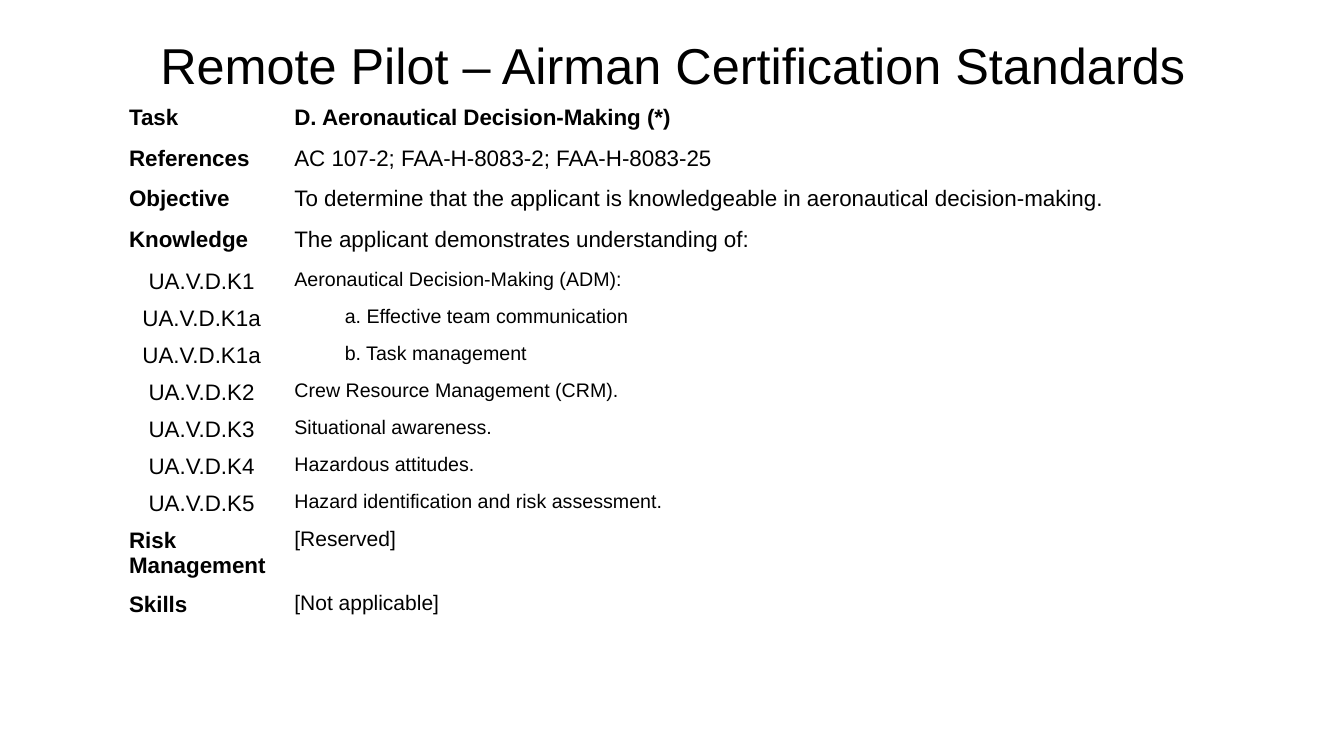
import pptx
import pptx.dml.color
import pptx.enum.text
import pptx.oxml.ns
import pptx.util
from lxml import etree
from pptx.util import Inches

BLACK = pptx.dml.color.RGBColor(0x00, 0x00, 0x00)
WHITE = pptx.dml.color.RGBColor(0xFF, 0xFF, 0xFF)
FONT = "Arial"
CENTER = pptx.enum.text.PP_ALIGN.CENTER
LEFT = pptx.enum.text.PP_ALIGN.LEFT

HEADING = "D. Aeronautical Decision-Making (*)"
OVERVIEW = [
    ("References", "AC 107-2; FAA-H-8083-2; FAA-H-8083-25"),
    ("Objective", "To determine that the applicant is knowledgeable in aeronautical decision-making."),
    ("Knowledge", "The applicant demonstrates understanding of:"),
]
KNOWLEDGE = [
    ("K1", "Aeronautical Decision-Making (ADM):", 0),
    ("K1a", "a. Effective team communication", 1),
    ("K1a", "b. Task management", 1),
    ("K2", "Crew Resource Management (CRM).", 0),
    ("K3", "Situational awareness.", 0),
    ("K4", "Hazardous attitudes.", 0),
    ("K5", "Hazard identification and risk assessment.", 0),
]
CLOSING = [("Risk Management", "[Reserved]"), ("Skills", "[Not applicable]")]
LABEL_WIDTH = 1.64
ROW_HEIGHTS = [0.41, 0.4, 0.41, 0.41] + [2.56 / len(KNOWLEDGE)] * len(KNOWLEDGE) + [0.63, 0.36]


def style_text(paragraph, size, bold=False, align=LEFT):
    paragraph.alignment = align
    for run in paragraph.runs:
        run.font.name = FONT
        run.font.size = pptx.util.Pt(size)
        run.font.bold = bold
        run.font.color.rgb = BLACK


def add_border(cell, side, width):
    qn = pptx.oxml.ns.qn
    line = etree.SubElement(cell._tc.get_or_add_tcPr(), qn(f"a:ln{side}"), w=str(pptx.util.Pt(width)))
    fill = etree.SubElement(line, qn("a:solidFill"))
    etree.SubElement(fill, qn("a:srgbClr"), val=str(WHITE))


def fill_cell(cell, text, size, bold=False, align=LEFT, level=0, bottom=1):
    cell.text_frame.text = text
    paragraph = cell.text_frame.paragraphs[0]
    style_text(paragraph, size, bold, align)
    if level:
        paragraph.level = level
        properties = paragraph._p.get_or_add_pPr()
        properties.set("marL", str(Inches(0.5 * level)))
        properties.set("indent", "0")
    for side, width in (("L", 1), ("R", 1), ("T", 1), ("B", bottom)):
        add_border(cell, side, width)
    cell.fill.background()


def add_title(slide, left, top, width, height):
    title = slide.shapes.title
    title.left, title.top = Inches(left), Inches(top)
    title.width, title.height = Inches(width), Inches(height)
    frame = title.text_frame
    frame.text = "Remote Pilot – Airman Certification Standards"
    frame.word_wrap = False
    frame.auto_size = pptx.enum.text.MSO_AUTO_SIZE.SHAPE_TO_FIT_TEXT
    style_text(frame.paragraphs[0], 36, align=CENTER)


def add_standards(slide, left, top, width, height):
    table = slide.shapes.add_table(
        len(ROW_HEIGHTS), 2, Inches(left), Inches(top), Inches(width), Inches(height)
    ).table
    table.horz_banding = False
    for column, column_width in zip(table.columns, (LABEL_WIDTH, width - LABEL_WIDTH)):
        column.width = Inches(column_width)
    for row, row_height in zip(table.rows, ROW_HEIGHTS):
        row.height = Inches(row_height)

    rows = iter(table.rows)
    task, heading = next(rows).cells
    fill_cell(task, "Task", 16, bold=True, bottom=3)
    fill_cell(heading, HEADING, 16, bold=True, bottom=3)
    for entries, size in ((OVERVIEW, 16), (KNOWLEDGE, 14), (CLOSING, 15)):
        for label, detail, *level in entries:
            label_cell, detail_cell = next(rows).cells
            if level:
                fill_cell(label_cell, f"UA.V.D.{label}", 16, align=CENTER)
            else:
                fill_cell(label_cell, label, 16, bold=True)
            fill_cell(detail_cell, detail, size, level=sum(level))


def main():
    presentation = pptx.Presentation()
    presentation.slide_width = Inches(13.33)
    presentation.slide_height = Inches(7.5)
    slide = presentation.slides.add_slide(presentation.slide_layouts[5])
    slide.background.fill.solid()
    slide.background.fill.fore_color.rgb = WHITE
    add_title(slide, 1.44, 0.28, 10.47, 0.71)
    add_standards(slide, 1.18, 0.99, 10.99, 5.18)
    presentation.save("out.pptx")


if __name__ == "__main__":
    main()
